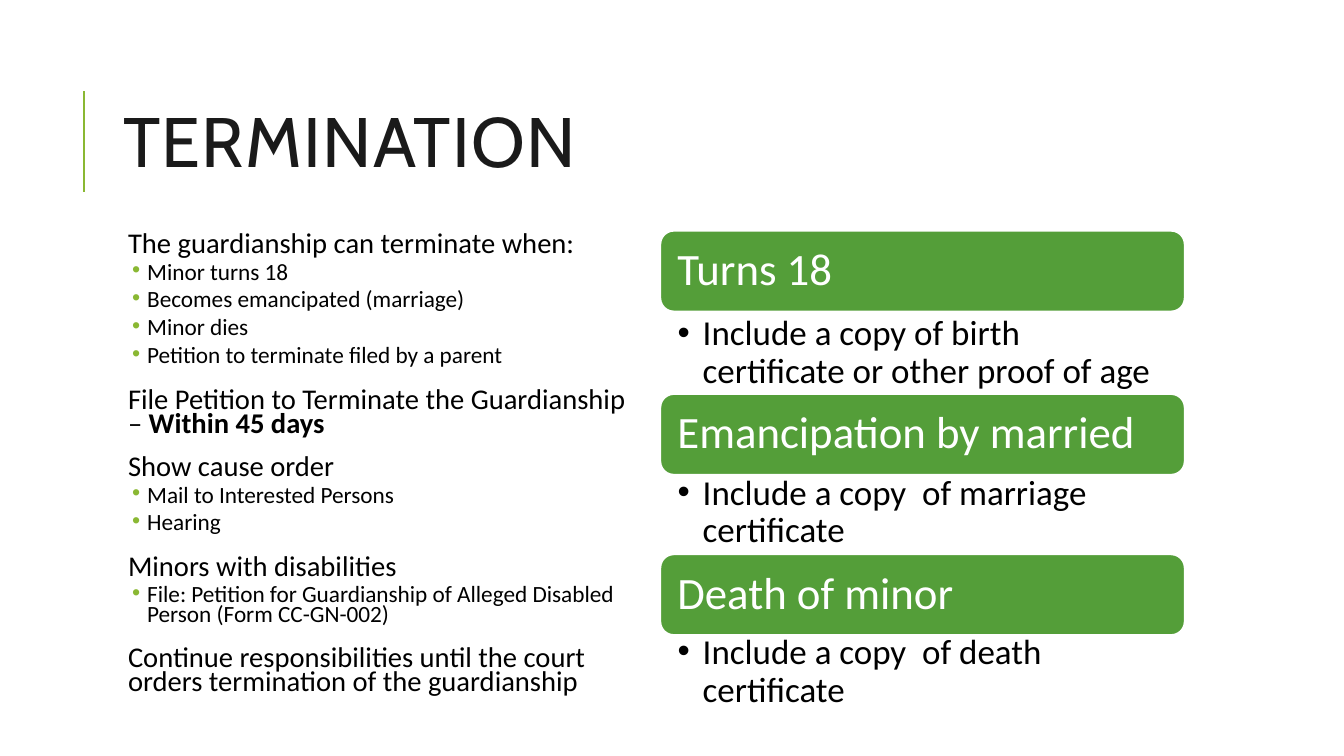
from dataclasses import dataclass

from lxml.etree import SubElement
from pptx import Presentation
from pptx.dml.color import RGBColor
from pptx.enum.shapes import MSO_CONNECTOR, MSO_SHAPE
from pptx.enum.text import MSO_ANCHOR, MSO_AUTO_SIZE, PP_ALIGN
from pptx.oxml.ns import qn
from pptx.util import Pt

EMU_PER_PX = 9144  # 100 px to the inch


@dataclass(frozen=True)
class Theme:
    title_font: str = "Cabin"
    body_font: str = "Calibri"
    ink: RGBColor = RGBColor(0x1A, 0x1A, 0x1A)
    black: RGBColor = RGBColor(0, 0, 0)
    white: RGBColor = RGBColor(0xFF, 0xFF, 0xFF)
    lime: RGBColor = RGBColor(0x8A, 0xB8, 0x33)
    green: RGBColor = RGBColor(0x54, 0x9E, 0x39)
    title: float = 50
    topic: float = 20.4
    point: float = 16.6
    bar: float = 32
    detail: float = 25


THEME = Theme()

# Each topic holds its plain text, its bold ending and its points.
TOPICS = [
    ("The guardianship can terminate when:", "",
     ["Minor turns 18", "Becomes emancipated (marriage)", "Minor dies",
      "Petition to terminate filed by a parent"]),
    ("File Petition to Terminate the Guardianship – ", "Within 45 days", []),
    ("Show cause order", "", ["Mail to Interested Persons", "Hearing"]),
    ("Minors with disabilities", "",
     ["File: Petition for Guardianship of Alleged Disabled Person (Form CC-GN-002)"]),
    ("Continue responsibilities until the court orders termination of the guardianship",
     "", []),
]

# Bar top and detail top are measured from the top of the column.
REASONS = [
    (0, "Turns 18", 80, "Include a copy of birth certificate or other proof of age"),
    (162, "Emancipation by married", 238, "Include a copy  of marriage certificate"),
    (321, "Death of minor", 396, "Include a copy  of death certificate"),
]


def px(*lengths):
    return [length * EMU_PER_PX for length in lengths]


def format_runs(p, size, color, font=THEME.body_font):
    for r in p.runs:
        r.font.size = Pt(size)
        r.font.name = font
        r.font.color.rgb = color


def set_frame(tf, insets, anchor=MSO_ANCHOR.TOP):
    tf.word_wrap = True
    tf.auto_size = MSO_AUTO_SIZE.NONE
    tf.vertical_anchor = anchor
    tf.margin_left, tf.margin_top, tf.margin_right, tf.margin_bottom = px(*insets)


def set_spacing(p, line, before=0, after=0):
    p.line_spacing = line
    p.space_before = Pt(before)
    p.space_after = Pt(after)


def set_indent(p, left, hanging=0, bullet_color=None):
    """Indent a paragraph; a bullet colour also gives it a bullet."""
    pPr = p._p.get_or_add_pPr()
    left, hanging = px(left, hanging)
    pPr.set("marL", str(left))
    pPr.set("indent", str(-hanging))
    if bullet_color is not None:
        color = SubElement(pPr, qn("a:buClr"))
        SubElement(color, qn("a:srgbClr"), val=str(bullet_color))
        SubElement(pPr, qn("a:buFont"), typeface="Arial")
        SubElement(pPr, qn("a:buChar"), char="•")


def add_title(s, text, x, y, w, h):
    rule_x = x - 29
    rule = s.shapes.add_connector(
        MSO_CONNECTOR.STRAIGHT, *px(rule_x, y + 126, rule_x, y + 26))
    rule.line.color.rgb = THEME.lime
    rule.line.width = Pt(1.5)
    SubElement(rule._element.spPr, qn("a:effectLst"))

    title = s.shapes.title
    title.left, title.top, title.width, title.height = px(x, y, w, h)
    tf = title.text_frame
    tf.text = text
    set_frame(tf, (10, 5, 10, 5), MSO_ANCHOR.MIDDLE)
    p = tf.paragraphs[0]
    p.alignment = PP_ALIGN.LEFT
    set_spacing(p, 0.8)
    format_runs(p, THEME.title, THEME.ink, THEME.title_font)
    p.runs[0]._r.get_or_add_rPr().set("spc", "100")


def add_topics(s, topics, x, y, w, h):
    tf = s.shapes.add_textbox(*px(x, y, w, h)).text_frame
    set_frame(tf, (5, 5, 5, 5))
    p = tf.paragraphs[0]
    for i, (text, bold_end, points) in enumerate(topics):
        if i:
            p = tf.add_paragraph()
        p.text = text
        if bold_end:
            r = p.add_run()
            r.text = bold_end
            r.font.bold = True
        set_spacing(p, 0.7, 12, 2)
        set_indent(p, 10)
        format_runs(p, THEME.topic, THEME.black)
        for point in points:
            p = tf.add_paragraph()
            p.text = point
            p.level = 1
            set_spacing(p, 0.7, 2, 4)
            set_indent(p, 29, 15, THEME.lime)
            format_runs(p, THEME.point, THEME.black)


def add_bar(s, text, x, y, w, h):
    bar = s.shapes.add_shape(MSO_SHAPE.ROUNDED_RECTANGLE, *px(x, y, w, h))
    bar.shadow.inherit = False
    bar.fill.solid()
    bar.fill.fore_color.rgb = THEME.green
    bar.line.color.rgb = THEME.white
    bar.line.width = Pt(1.25)
    tf = bar.text_frame
    tf.text = text
    set_frame(tf, (13, 13, 13, 13), MSO_ANCHOR.MIDDLE)
    p = tf.paragraphs[0]
    p.alignment = PP_ALIGN.LEFT
    set_spacing(p, 0.9)
    format_runs(p, THEME.bar, THEME.white)


def add_detail(s, text, x, y, w, h):
    tf = s.shapes.add_textbox(*px(x, y, w, h)).text_frame
    tf.text = text
    set_frame(tf, (17, 4, 25, 4))
    p = tf.paragraphs[0]
    set_spacing(p, 0.9)
    set_indent(p, 25, 25, THEME.black)
    format_runs(p, THEME.detail, THEME.black)


def add_reasons(s, reasons, x, y, w):
    for bar_top, heading, detail_top, detail in reasons:
        add_bar(s, heading, x, y + bar_top, w, 80)
        add_detail(s, detail, x, y + detail_top, w, 78)


def main():
    prs = Presentation()
    prs.slide_width, prs.slide_height = px(1333, 750)
    s = prs.slides.add_slide(prs.slide_layouts.get_by_name("Title Only"))
    add_title(s, "TERMINATION", 112, 64, 1063, 164)
    add_topics(s, TOPICS, 112, 228, 520, 490)
    add_reasons(s, REASONS, 655, 229, 520)
    prs.save("out.pptx")


if __name__ == "__main__":
    main()
